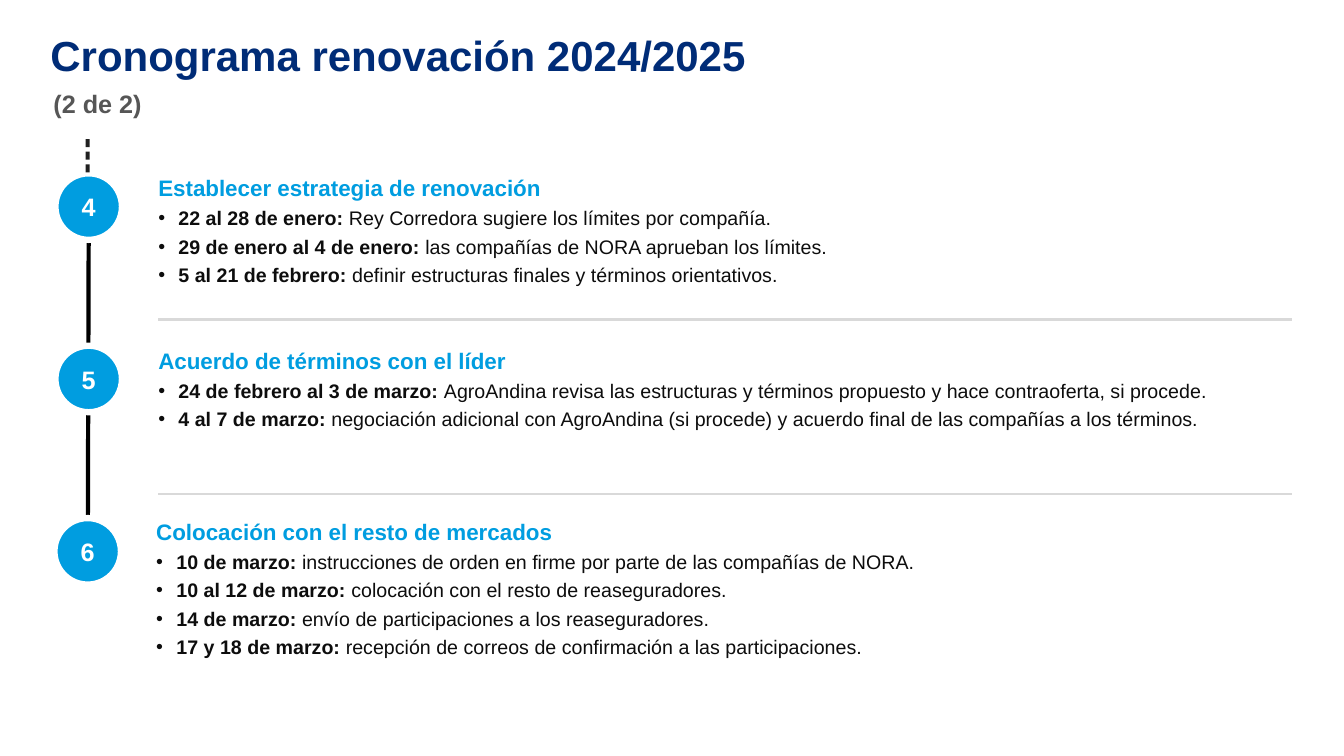
from typing import NamedTuple

from lxml.etree import SubElement
from pptx import Presentation
from pptx.dml.color import RGBColor
from pptx.enum.shapes import MSO_CONNECTOR, MSO_SHAPE
from pptx.enum.text import MSO_ANCHOR, MSO_AUTO_SIZE, PP_ALIGN
from pptx.oxml.ns import qn
from pptx.util import Inches, Pt

BLUE, INK, WHITE = "009DE0", "0D0D0D", "FFFFFF"
TOP, PITCH, SIZE = 1.72, 1.71, 0.66


class Task(NamedTuple):
    """A date range and what happens in it."""
    date: str
    text: str


class Step(NamedTuple):
    """A numbered stage of the schedule."""
    num: int
    head: str
    left: float
    text_left: float
    text_top: float
    height: float
    tasks: list[Task]


STEPS = [
    Step(4, "Establecer estrategia de renovación", 0.55, 1.57, 1.73, 1.4, [
        Task("22 al 28 de enero: ", "Rey Corredora sugiere los límites por compañía."),
        Task("29 de enero al 4 de enero: ", "las compañías de NORA aprueban los límites."),
        Task("5 al 21 de febrero: ", "definir estructuras finales y términos orientativos."),
    ]),
    Step(5, "Acuerdo de términos con el líder", 0.55, 1.57, 3.44, 1.34, [
        Task("24 de febrero al 3 de marzo: ",
             "AgroAndina revisa las estructuras y términos propuesto y hace contraoferta, si procede."),
        Task("4 al 7 de marzo: ",
             "negociación adicional con AgroAndina (si procede) y acuerdo final de las compañías a los términos."),
    ]),
    Step(6, "Colocación con el resto de mercados", 0.54, 1.55, 5.14, 1.22, [
        Task("10 de marzo: ", "instrucciones de orden en firme por parte de las compañías de NORA."),
        Task("10 al 12 de marzo: ", "colocación con el resto de reaseguradores."),
        Task("14 de marzo: ", "envío de participaciones a los reaseguradores."),
        Task("17 y 18 de marzo: ", "recepción de correos de confirmación a las participaciones."),
    ]),
]


def color(code: str) -> RGBColor:
    """Turn a hex string into a colour."""
    return RGBColor.from_string(code)


def add_run(para, text: str, size: float, code: str, bold: bool = True) -> None:
    """Add one formatted run to a paragraph."""
    run = para.add_run()
    run.text = text
    run.font.name = "Arial"
    run.font.size = Pt(size)
    run.font.bold = bold
    run.font.color.rgb = color(code)


def set_frame(shape, anchor=MSO_ANCHOR.TOP, wrap: bool = True):
    """Clear the margins of a shape's text frame and return it."""
    frame = shape.text_frame
    frame.margin_left = frame.margin_right = frame.margin_top = frame.margin_bottom = 0
    frame.auto_size = MSO_AUTO_SIZE.NONE
    frame.vertical_anchor = anchor
    frame.word_wrap = wrap
    return frame


def set_indent(para, left: float, mark: str = "") -> None:
    """Set a hanging indent with a bullet, or none."""
    props = para._p.get_or_add_pPr()
    props.set("marL", str(Inches(left)))
    props.set("indent", str(-Inches(left)))
    if mark:
        SubElement(props, qn("a:buFont"), typeface="Arial")
        SubElement(props, qn("a:buChar"), char=mark)
    else:
        SubElement(props, qn("a:buNone"))


def fill_holder(shape, box: tuple[float, ...], text: str, size: float, code: str):
    """Place a placeholder, write its line and return the paragraph."""
    shape.left, shape.top, shape.width, shape.height = map(Inches, box)
    para = set_frame(shape).paragraphs[0]
    set_indent(para, 0)
    para.alignment = PP_ALIGN.LEFT
    para.space_before = Pt(0)
    add_run(para, text, size, code)
    return para


def add_shape(slide, kind, box: tuple[float, ...], code: str):
    """Add a flat filled shape without an outline."""
    shape = slide.shapes.add_shape(kind, *map(Inches, box))
    shape.shadow.inherit = False
    shape.fill.solid()
    shape.fill.fore_color.rgb = color(code)
    shape.line.fill.background()
    return shape


def add_line(slide, ends: tuple[float, ...], code: str, width: float, heads: bool = False) -> None:
    """Add a straight line, with end marks if asked."""
    line = slide.shapes.add_connector(MSO_CONNECTOR.STRAIGHT, *map(Inches, ends))
    line.line.color.rgb = color(code)
    line.line.width = Pt(width)
    if heads:
        stroke = line.line._get_or_add_ln()
        SubElement(stroke, qn("a:headEnd"), type="oval")
        SubElement(stroke, qn("a:tailEnd"), type="triangle")
    SubElement(line._element.spPr, qn("a:effectLst"))


def add_step(slide, step: Step, top: float) -> None:
    """Draw a stage: its numbered disc, heading and dated tasks."""
    disc = add_shape(slide, MSO_SHAPE.OVAL, (step.left, top, SIZE, SIZE), BLUE)
    disc.line.color.rgb = color(WHITE)
    disc.line.width = Pt(4.5)
    para = set_frame(disc, MSO_ANCHOR.MIDDLE, False).paragraphs[0]
    para.alignment = PP_ALIGN.CENTER
    add_run(para, str(step.num), 18, WHITE)
    box = (step.text_left, step.text_top, 11.24, step.height)
    frame = set_frame(slide.shapes.add_textbox(*map(Inches, box)))
    add_run(frame.paragraphs[0], step.head, 16, BLUE)
    for task in step.tasks:
        para = frame.add_paragraph()
        para.level = 1
        set_indent(para, 0.2, "•")
        para.space_before = Pt(3.5)
        add_run(para, task.date, 14, INK)
        add_run(para, task.text, 14, INK, False)


def main() -> None:
    """Build the schedule slide and save it."""
    deck = Presentation()
    deck.slide_width, deck.slide_height = Inches(13.33), Inches(7.5)
    slide = deck.slides.add_slide(deck.slide_layouts[1])
    title = fill_holder(slide.shapes.title, (0.5, 0.39, 12.31, 0.54),
                        "Cronograma renovación 2024/2025", 30, "002C77")
    title.line_spacing = 0.8
    fill_holder(slide.placeholders[1], (0.53, 0.88, 12.27, 0.35), "(2 de 2)", 18, "565656")
    add_line(slide, (0.88, 2.13, 0.87, 5.8), "000000", 3, True)
    for i, step in enumerate(STEPS):
        add_step(slide, step, TOP + i * PITCH)
    for y in (3.17, 4.9):
        add_line(slide, (12.81, y, 1.57, y), "D9D9D9", 1.5)
    for i in range(3):
        add_shape(slide, MSO_SHAPE.RECTANGLE, (0.85, 1.38 + i * 0.125, 0.04, 0.08), "202020")
    deck.save("out.pptx")


if __name__ == "__main__":
    main()
